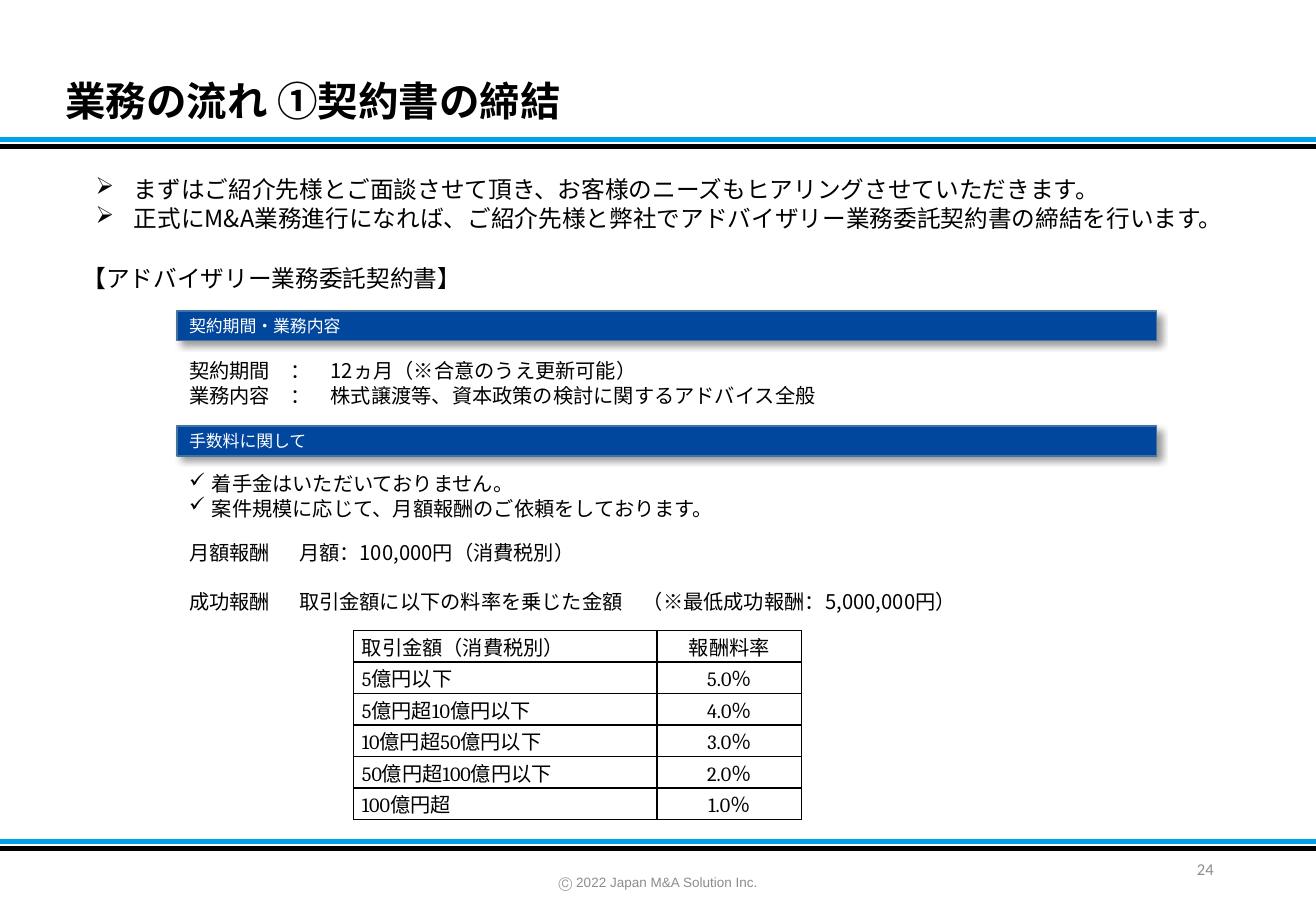
from lxml import etree
from pptx import Presentation
from pptx import util as u
from pptx.dml.color import RGBColor
from pptx.enum import shapes, text
from pptx.oxml import ns

BLACK = RGBColor(0x00, 0x00, 0x00)
WHITE = RGBColor(0xFF, 0xFF, 0xFF)
GREY = RGBColor(0x8C, 0x8C, 0x8C)
SKY = RGBColor(0x00, 0xA1, 0xE9)
NAVY = RGBColor(0x00, 0x47, 0x9D)
STEEL = RGBColor(0x43, 0x73, 0x9E)

GOTHIC = "Noto Sans CJK JP"
SLIDE_WIDTH, SLIDE_HEIGHT = 780, 540
ALIGN = text.PP_ALIGN
MIDDLE = text.MSO_ANCHOR.MIDDLE

TITLE = {"size": u.Pt(24), "name": GOTHIC, "bold": True}
LEAD = {"size": u.Pt(14), "name": GOTHIC, "bold": False}
BODY = {"size": u.Pt(12), "name": GOTHIC, "bold": False}
BAND = {"size": u.Pt(10), "name": "Arial", "bold": False}
CELL = {"size": u.Pt(12), "name": "Cambria", "bold": False}
FOOTER = {"size": u.Pt(8), "name": "Arial", "bold": False}
NUMBER = {"size": u.Pt(9.8), "name": "Calibri", "bold": False}

LEAD_LINE = {"line_spacing": u.Pt(17)}
BODY_LINE = {"line_spacing": u.Pt(14.4)}

FEES = [
    ("取引金額（消費税別）", "報酬料率"),
    ("5億円以下", "5.0％"),
    ("5億円超10億円以下", "4.0％"),
    ("10億円超50億円以下", "3.0％"),
    ("50億円超100億円以下", "2.0％"),
    ("100億円超", "1.0％"),
]


def set_values(target, values):
    """Set every attribute in a dict of format values."""
    for name, value in values.items():
        setattr(target, name, value)


def add_element(parent, tag, **attributes):
    """Append a drawing element with the given attributes."""
    element = etree.SubElement(parent, ns.qn(tag))
    for name, value in attributes.items():
        element.set(name, str(value))
    return element


def add_run(paragraph, words, font, color=BLACK):
    """Add a run with one typeface for Latin and Japanese letters."""
    run = paragraph.add_run()
    run.text = words
    set_values(run.font, font)
    run.font.color.rgb = color
    if font["name"] == GOTHIC:
        add_element(run._r.get_or_add_rPr(), "a:ea", typeface=GOTHIC)


def add_bullet(paragraph, mark, indent):
    """Give a paragraph a hanging bullet."""
    properties = paragraph._p.get_or_add_pPr()
    properties.set("marL", str(u.Pt(indent)))
    properties.set("indent", str(-u.Pt(indent)))
    add_element(properties, "a:buChar", char=mark)


def add_tabs(paragraph, stops):
    """Give a paragraph left tab stops."""
    tab_list = add_element(paragraph._p.get_or_add_pPr(), "a:tabLst")
    for stop in stops:
        add_element(tab_list, "a:tab", pos=u.Pt(stop), algn="l")


def add_text(slide, box, lines, font, layout, color=BLACK, anchor=text.MSO_ANCHOR.TOP):
    """Add a text box; each line is its words and paragraph options."""
    shape = slide.shapes.add_textbox(*map(u.Pt, box))
    frame = shape.text_frame
    set_values(frame, {"word_wrap": True, "vertical_anchor": anchor})
    for index, (words, options) in enumerate(lines):
        paragraph = frame.add_paragraph() if index else frame.paragraphs[0]
        if "bullet" in options:
            add_bullet(paragraph, *options["bullet"])
        if "tabs" in options:
            add_tabs(paragraph, options["tabs"])
        set_values(paragraph, layout)
        paragraph.space_before = u.Pt(options.get("before", 0))
        add_run(paragraph, words, font, color)
    return shape


def add_rule(slide, top, color):
    """Draw a rule across the slide."""
    ends = map(u.Pt, (0, top, SLIDE_WIDTH, top))
    rule = slide.shapes.add_connector(shapes.MSO_CONNECTOR.STRAIGHT, *ends)
    rule.line.color.rgb = color
    rule.line.width = u.Pt(3)
    add_element(rule._element.spPr, "a:effectLst")


def add_band(slide, top, words):
    """Draw a section band with a soft shadow."""
    shape = slide.shapes.add_shape(shapes.MSO_SHAPE.RECTANGLE, *map(u.Pt, (105, top, 580.5, 17.5)))
    shape.fill.solid()
    shape.fill.fore_color.rgb = NAVY
    shape.line.color.rgb = STEEL
    shape.line.width = u.Pt(1)
    effects = add_element(shape._element.spPr, "a:effectLst")
    shadow = add_element(effects, "a:outerShdw", blurRad=u.Pt(4), dist=u.Pt(3),
                         dir=45 * 60000, algn="tl", rotWithShape=0)
    color = add_element(shadow, "a:srgbClr", val="000000")
    add_element(color, "a:alpha", val=40000)
    shape.text_frame.vertical_anchor = MIDDLE
    paragraph = shape.text_frame.paragraphs[0]
    paragraph.alignment = ALIGN.LEFT
    add_run(paragraph, words, BAND, WHITE)


def add_borders(cell):
    """Outline a table cell in black."""
    properties = cell._tc.get_or_add_tcPr()
    for side in "LRTB":
        line = add_element(properties, f"a:ln{side}", w=u.Pt(1))
        add_element(add_element(line, "a:solidFill"), "a:srgbClr", val=BLACK)


def add_fee_table(slide):
    """Add the table of fee rates."""
    row_height, widths = 18.7, (180, 85.7)
    box = (209.5, 373.7, sum(widths), row_height * len(FEES))
    table = slide.shapes.add_table(len(FEES), 2, *map(u.Pt, box)).table
    set_values(table, {"first_row": False, "horz_banding": False})
    for column, width in zip(table.columns, widths):
        column.width = u.Pt(width)
    margins = {"margin_left": u.Pt(5), "margin_right": u.Pt(5), "margin_top": 0,
               "margin_bottom": 0, "vertical_anchor": MIDDLE}
    for row, values in zip(table.rows, FEES):
        row.height = u.Pt(row_height)
        for cell, words, alignment in zip(row.cells, values, (ALIGN.JUSTIFY, ALIGN.CENTER)):
            add_borders(cell)
            cell.fill.background()
            set_values(cell, margins)
            paragraph = cell.text_frame.paragraphs[0]
            paragraph.alignment = alignment
            add_run(paragraph, words, CELL)


def main():
    """Build the contract slide."""
    presentation = Presentation()
    set_values(presentation, {"slide_width": u.Pt(SLIDE_WIDTH), "slide_height": u.Pt(SLIDE_HEIGHT)})
    slide = presentation.slides.add_slide(presentation.slide_layouts[6])

    for top in (82.8, 499):
        add_rule(slide, top, SKY)
        add_rule(slide, top + 3.8, BLACK)

    add_text(slide, (31.7, 44.6, 583, 33), [("業務の流れ ①契約書の締結", {})],
             TITLE, {"line_spacing": 0.9}, anchor=MIDDLE)

    arrow = {"bullet": ("➢", 22.5)}
    add_text(slide, (49.7, 100, 690, 41), [
        ("まずはご紹介先様とご面談させて頂き、お客様のニーズもヒアリングさせていただきます。", arrow),
        ("正式にM&A業務進行になれば、ご紹介先様と弊社でアドバイザリー業務委託契約書の締結を行います。", arrow),
    ], LEAD, LEAD_LINE)

    contract = add_text(slide, (41.8, 152.7, 337, 24.5), [("【", {})],
                        {**LEAD, "bold": True}, LEAD_LINE)
    add_run(contract.text_frame.paragraphs[0], "アドバイザリー業務委託契約書】", LEAD)

    add_band(slide, 184.4, "契約期間・業務内容")
    terms = {"tabs": (60, 84)}
    add_text(slide, (105, 209, 570, 36), [
        ("契約期間\t：\t12ヵ月（※合意のうえ更新可能）", terms),
        ("業務内容\t：\t株式譲渡等、資本政策の検討に関するアドバイス全般", terms),
    ], BODY, BODY_LINE)

    add_band(slide, 252.7, "手数料に関して")
    check = {"bullet": ("✓", 13.5)}
    add_text(slide, (105, 276, 632, 104.4), [
        ("着手金はいただいておりません。", check),
        ("案件規模に応じて、月額報酬のご依頼をしております。", check),
        ("月額報酬\t月額：100,000円（消費税別）", {"tabs": (65.2,), "before": 12.2}),
        ("成功報酬\t取引金額に以下の料率を乗じた金額　（※最低成功報酬：5,000,000円）",
         {"tabs": (65.2,), "before": 14.4}),
    ], BODY, BODY_LINE)

    add_fee_table(slide)
    add_text(slide, (268.5, 512, 243.4, 21.6), [("Ⓒ 2022 Japan M&A Solution Inc.", {})],
             FOOTER, {"alignment": ALIGN.CENTER}, GREY, MIDDLE)
    add_text(slide, (550.8, 500.4, 175.7, 28.8), [("24", {})],
             NUMBER, {"alignment": ALIGN.RIGHT}, GREY, MIDDLE)
    presentation.save("out.pptx")


if __name__ == "__main__":
    main()
